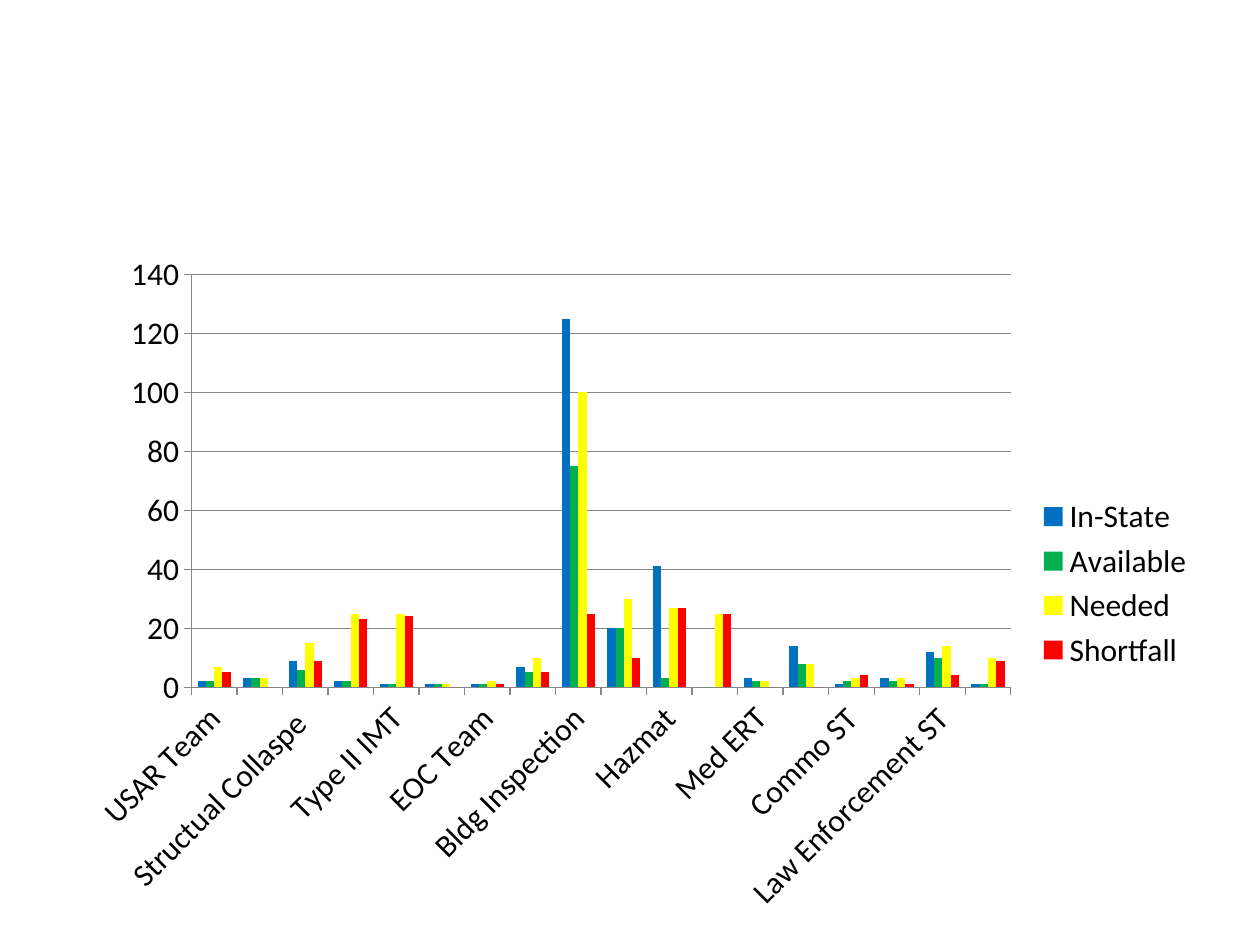
from pptx import Presentation
from pptx.chart.data import CategoryChartData
from pptx.dml.color import RGBColor
from pptx.enum.chart import XL_CHART_TYPE, XL_LEGEND_POSITION, XL_TICK_MARK
from pptx.util import Inches, Pt

COLUMN = XL_CHART_TYPE.COLUMN_CLUSTERED
RIGHT = XL_LEGEND_POSITION.RIGHT
OUT, NONE = XL_TICK_MARK.OUTSIDE, XL_TICK_MARK.NONE

COLORS = {
    "In-State": "0070C0",
    "Available": "00B050",
    "Needed": "FFFF00",
    "Shortfall": "FF0000",
    "text": "000000",
    "line": "868686",
}

# Each team: in-state, available, needed, shortfall
TEAMS = {
    "USAR Team": (2, 2, 7, 5),
    "TRT": (3, 3, 3, 0),
    "Structual Collaspe ": (9, 6, 15, 9),
    "Type III IMT": (2, 2, 25, 23),
    "Type II IMT": (1, 1, 25, 24),
    "Type I IMT": (1, 1, 1, 0),
    "EOC Team": (1, 1, 2, 1),
    "EMAC A-Team": (7, 5, 10, 5),
    "Bldg Inspection": (125, 75, 100, 25),
    "Bridge Inspection": (20, 20, 30, 10),
    "Hazmat": (41, 3, 27, 27),
    "Ambulance ST": (0, 0, 25, 25),
    "Med ERT": (3, 2, 2, 0),
    "Water Rescue": (14, 8, 8, 0),
    "Commo ST": (1, 2, 3, 4),
    "MMRT": (3, 2, 3, 1),
    "Law Enforcement ST": (12, 10, 14, 4),
    "Crowd Control": (1, 1, 10, 9),
}
NAMES = ("In-State", "Available", "Needed", "Shortfall")

deck = Presentation()
deck.slide_width, deck.slide_height = Inches(10), Inches(7.5)
slide = deck.slides.add_slide(deck.slide_layouts[6])

# Chart of team resources
data = CategoryChartData()
data.categories = list(TEAMS)
for name, vals in zip(NAMES, zip(*TEAMS.values())):
    data.add_series(name, vals)
chart = slide.shapes.add_chart(
    COLUMN, Inches(0.58), Inches(1.92), Inches(9), Inches(5.42), data
).chart
chart.has_title = False
for key, val in {"name": "Calibri", "size": Pt(18)}.items():
    setattr(chart.font, key, val)
chart.font.color.rgb = RGBColor.from_string(COLORS["text"])

# Column colours
plot = chart.plots[0]
plot.gap_width = 150
plot.overlap = 0
plot.vary_by_categories = False
for series in plot.series:
    series.invert_if_negative = False
    series.format.fill.solid()
    series.format.fill.fore_color.rgb = RGBColor.from_string(COLORS[series.name])

# Axes and gridlines
teams, count = chart.category_axis, chart.value_axis
count.has_major_gridlines = True
for axis in (teams, count):
    for key, val in {"major_tick_mark": OUT, "minor_tick_mark": NONE}.items():
        setattr(axis, key, val)
for part in (teams, count, count.major_gridlines):
    part.format.line.width = Pt(0.75)
    part.format.line.color.rgb = RGBColor.from_string(COLORS["line"])

# Legend
chart.has_legend = True
chart.legend.position = RIGHT
chart.legend.include_in_layout = False

deck.save("out.pptx")
